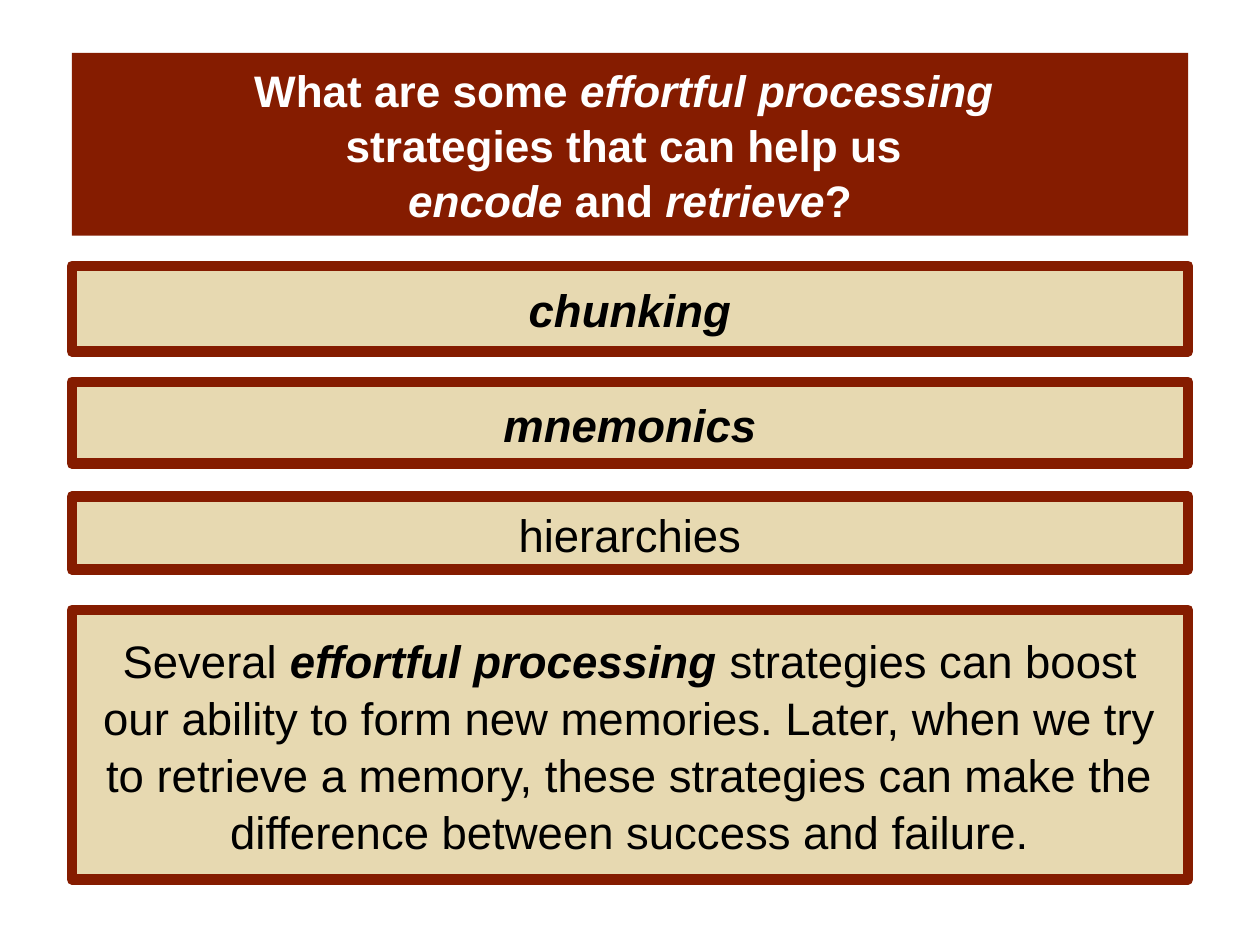
from lxml.etree import SubElement
from pptx import Presentation
from pptx.dml.color import RGBColor
from pptx.enum.shapes import MSO_SHAPE
from pptx.enum.text import MSO_ANCHOR, PP_ALIGN
from pptx.oxml.ns import qn
from pptx.util import Inches, Pt

WIDTH, HEIGHT = 10, 7.5
MARGIN = 0.057 * WIDTH
RED, SAND, WHITE, BLACK = "851C00", "E7D9B1", "FFFFFF", "000000"
PLAIN, BOLD, BOLD_ITALIC = (False, False), (True, False), (True, True)

TITLE = [
    ("What are some ", BOLD),
    ("effortful processing \v", BOLD_ITALIC),
    ("strategies that can help us \v", BOLD),
    ("encode", BOLD_ITALIC),
    (" and ", BOLD),
    ("retrieve", BOLD_ITALIC),
    ("?", BOLD),
]
ANSWERS = [
    (2.11, 0.68, [("chunking", BOLD_ITALIC)]),
    (3.03, 0.65, [("mnemonics", BOLD_ITALIC)]),
    (3.94, 0.58, [("hierarchies", PLAIN)]),
    (4.84, 2.14, [
        ("Several ", PLAIN),
        ("effortful processing ", BOLD_ITALIC),
        ("strategies can boost our ability to form new memories. Later, "
         "when we try to retrieve a memory, these strategies can make the "
         "difference between success and failure.", PLAIN),
    ]),
]


def rgb(value):
    """Return the colour for a hex string."""
    return RGBColor.from_string(value)


def add_runs(p, parts, size, color):
    """Fill a paragraph with styled runs, turning vertical tabs into breaks."""
    for text, (bold, italic) in parts:
        r = p.add_run()
        r.text = text.rstrip("\v")
        r.font.name, r.font.size = "Arial", Pt(size)
        r.font.bold, r.font.italic = bold, italic
        r.font.color.rgb = rgb(color)
        if text.endswith("\v"):
            p.add_line_break()


def add_panel(s, box, parts, fill, size, color):
    """Add a filled, borderless panel with centred text."""
    sp = s.shapes.add_shape(MSO_SHAPE.RECTANGLE, *map(Inches, box))
    sp.shadow.inherit = False
    sp.fill.solid()
    sp.fill.fore_color.rgb = rgb(fill)
    sp.line.fill.background()
    tf = sp.text_frame
    tf.word_wrap = True
    tf.vertical_anchor = MSO_ANCHOR.MIDDLE
    p = tf.paragraphs[0]
    p.alignment = PP_ALIGN.CENTER
    p.line_spacing = 1.04
    add_runs(p, parts, size, color)
    return sp


def add_title(s, box):
    """Add the question banner."""
    add_panel(s, box, TITLE, RED, 25.2, WHITE)


def add_answer(s, box, parts):
    """Add an answer panel with a thick, round-cornered border."""
    sp = add_panel(s, box, parts, SAND, 26, BLACK)
    sp.line.color.rgb = rgb(RED)
    sp.line.width = Pt(6)
    SubElement(sp.line._get_or_add_ln(), qn("a:round"))


def main():
    """Build and save the slide."""
    prs = Presentation()
    prs.slide_width, prs.slide_height = Inches(WIDTH), Inches(HEIGHT)
    s = prs.slides.add_slide(prs.slide_layouts[6])
    width = WIDTH - 2 * MARGIN
    add_title(s, (MARGIN, 0.42, width, 1.45))
    for top, height, parts in ANSWERS:
        add_answer(s, (MARGIN, top, width, height), parts)
    prs.save("out.pptx")


if __name__ == "__main__":
    main()
